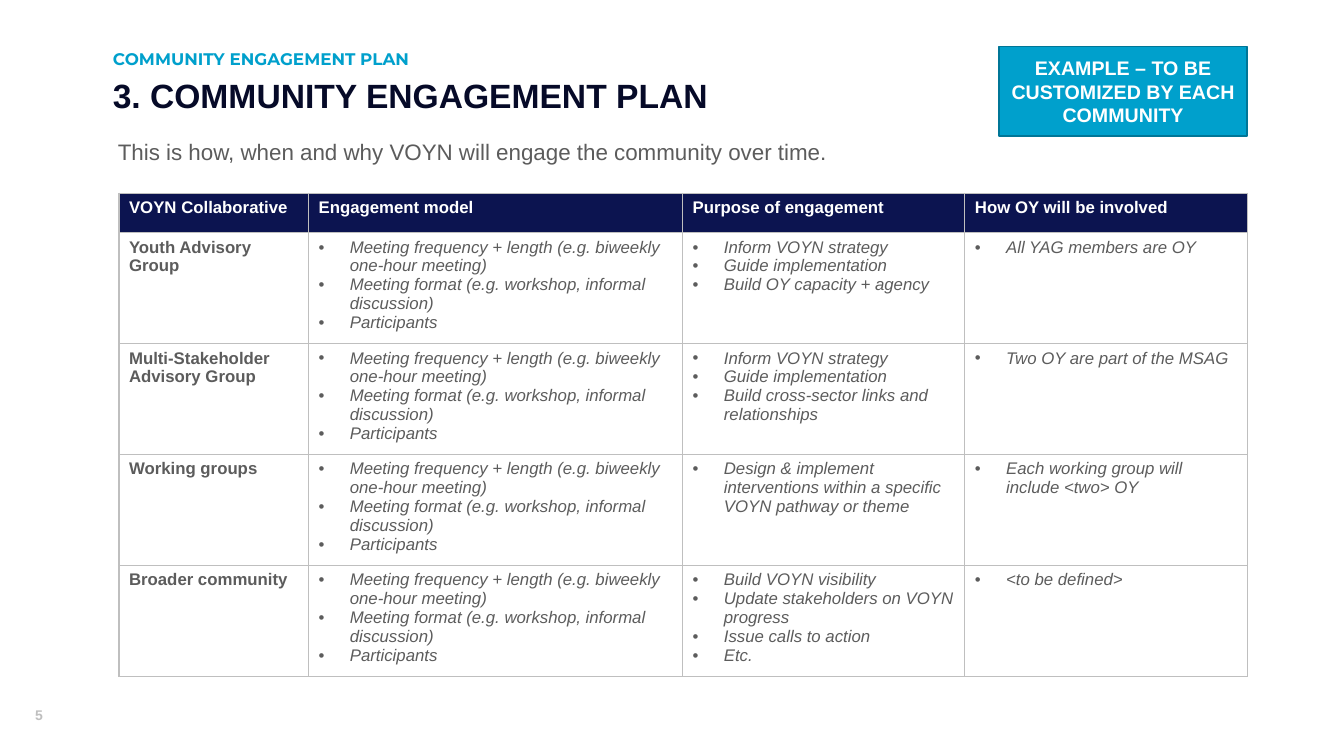
from dataclasses import dataclass

from lxml import etree
from pptx import Presentation
from pptx.dml.color import RGBColor
from pptx.enum.shapes import MSO_SHAPE
from pptx.enum.text import MSO_ANCHOR, PP_ALIGN
from pptx.oxml.ns import qn
from pptx.slide import Slide
from pptx.table import _Cell
from pptx.text.text import TextFrame
from pptx.util import Inches, Pt

RECTANGLE = MSO_SHAPE.RECTANGLE
MIDDLE = MSO_ANCHOR.MIDDLE
CENTER = PP_ALIGN.CENTER

COLORS = {
    "white": "FFFFFF",
    "navy": "0C1450",
    "ink": "060A28",
    "cyan": "00A0CC",
    "teal": "007697",
    "text": "5C5C5C",
    "rule": "BFBFBF",
}


@dataclass(frozen=True)
class Style:
    size: int
    color: str
    bold: bool = False
    italic: bool = False
    font: str = "Arial"


@dataclass(frozen=True)
class Label:
    text: str
    left: float
    top: float
    width: float
    height: float
    style: Style
    line_spacing: float = 0.9


@dataclass(frozen=True)
class Group:
    name: str
    purposes: list[str]
    involvement: str


LABELS = [
    Label("5", 0.25, 6.96, 0.53, 0.27, Style(10, "rule", bold=True), 1.0),
    Label("3. COMMUNITY ENGAGEMENT PLAN", 1.02, 0.74, 6.41, 0.5, Style(24, "ink", bold=True)),
    Label("COMMUNITY ENGAGEMENT PLAN", 1.02, 0.46, 4.05, 0.23,
          Style(12, "cyan", bold=True, font="Montserrat")),
    Label("This is how, when and why VOYN will engage the community over time.",
          1.07, 1.35, 11.3, 0.61, Style(16, "text")),
]

HEADINGS = ["VOYN Collaborative", "Engagement model", "Purpose of engagement",
            "How OY will be involved"]
ENGAGEMENT_MODEL = [
    "Meeting frequency + length (e.g. biweekly one-hour meeting)",
    "Meeting format (e.g. workshop, informal discussion)",
    "Participants",
]
GROUPS = [
    Group("Youth Advisory Group",
          ["Inform VOYN strategy", "Guide implementation", "Build OY capacity + agency"],
          "All YAG members are OY"),
    Group("Multi-Stakeholder Advisory Group",
          ["Inform VOYN strategy", "Guide implementation",
           "Build cross-sector links and relationships"],
          "Two OY are part of the MSAG"),
    Group("Working groups",
          ["Design & implement interventions within a specific VOYN pathway or theme"],
          "Each working group will include <two> OY"),
    Group("Broader community",
          ["Build VOYN visibility", "Update stakeholders on VOYN progress",
           "Issue calls to action", "Etc."],
          "<to be defined>"),
]
COLUMN_WIDTHS = [1.88, 3.71, 2.8, 2.8]
HEADER_HEIGHT = 0.39
GROUP_HEIGHT = 1.03
BULLET_INDENT = 0.31

HEADING_STYLE = Style(12, "white", bold=True)
NAME_STYLE = Style(12, "text", bold=True)
DETAIL_STYLE = Style(12, "text", italic=True)


def rgb(color: str) -> RGBColor:
    return RGBColor.from_string(COLORS[color])


def format_text(frame: TextFrame, style: Style) -> None:
    for paragraph in frame.paragraphs:
        for run in paragraph.runs:
            run.font.name = style.font
            run.font.size = Pt(style.size)
            run.font.bold = style.bold
            run.font.italic = style.italic
            run.font.color.rgb = rgb(style.color)


def add_label(slide: Slide, label: Label) -> None:
    box = slide.shapes.add_textbox(Inches(label.left), Inches(label.top),
                                   Inches(label.width), Inches(label.height))
    frame = box.text_frame
    frame.word_wrap = True
    frame.text = label.text
    frame.paragraphs[0].line_spacing = label.line_spacing
    format_text(frame, label.style)


def add_example_tag(slide: Slide) -> None:
    tag = slide.shapes.add_shape(RECTANGLE, Inches(9.91), Inches(0.46),
                                 Inches(2.46), Inches(0.89))
    tag.shadow.inherit = False
    tag.fill.solid()
    tag.fill.fore_color.rgb = rgb("cyan")
    tag.line.color.rgb = rgb("teal")
    tag.line.width = Pt(1)
    frame = tag.text_frame
    frame.word_wrap = True
    frame.vertical_anchor = MIDDLE
    frame.text = "EXAMPLE – TO BE CUSTOMIZED BY EACH COMMUNITY"
    frame.paragraphs[0].alignment = CENTER
    format_text(frame, Style(14, "white", bold=True))


def add_borders(cell: _Cell) -> None:
    properties = cell._tc.get_or_add_tcPr()
    for position, side in enumerate(("a:lnL", "a:lnR", "a:lnT", "a:lnB")):
        border = etree.Element(qn(side), w=str(Pt(1)))
        fill = etree.SubElement(border, qn("a:solidFill"))
        etree.SubElement(fill, qn("a:srgbClr"), val=COLORS["rule"])
        properties.insert(position, border)


def add_bullets(frame: TextFrame) -> None:
    indent = Inches(BULLET_INDENT)
    for paragraph in frame.paragraphs:
        properties = paragraph._p.get_or_add_pPr()
        properties.set("marL", str(indent))
        properties.set("indent", str(-indent))
        etree.SubElement(properties, qn("a:buFont"), typeface="Arial")
        etree.SubElement(properties, qn("a:buChar"), char="•")


def fill_cell(cell: _Cell, lines: list[str], style: Style, background: str,
              bulleted: bool = False) -> None:
    cell.fill.solid()
    cell.fill.fore_color.rgb = rgb(background)
    add_borders(cell)
    cell.text_frame.text = "\n".join(lines)
    format_text(cell.text_frame, style)
    if bulleted:
        add_bullets(cell.text_frame)


def add_engagement_table(slide: Slide) -> None:
    table = slide.shapes.add_table(
        len(GROUPS) + 1, len(HEADINGS), Inches(1.18), Inches(1.92),
        Inches(sum(COLUMN_WIDTHS)), Inches(HEADER_HEIGHT + GROUP_HEIGHT * len(GROUPS))).table
    for column, width in zip(table.columns, COLUMN_WIDTHS):
        column.width = Inches(width)
    table.rows[0].height = Inches(HEADER_HEIGHT)
    for column, heading in enumerate(HEADINGS):
        fill_cell(table.cell(0, column), [heading], HEADING_STYLE, "navy")
    for row, group in enumerate(GROUPS, start=1):
        table.rows[row].height = Inches(GROUP_HEIGHT)
        fill_cell(table.cell(row, 0), [group.name], NAME_STYLE, "white")
        details = [ENGAGEMENT_MODEL, group.purposes, [group.involvement]]
        for column, lines in enumerate(details, start=1):
            fill_cell(table.cell(row, column), lines, DETAIL_STYLE, "white", bulleted=True)


def main() -> None:
    presentation = Presentation()
    presentation.slide_width = Inches(13.33)
    presentation.slide_height = Inches(7.5)
    slide = presentation.slides.add_slide(presentation.slide_layouts[6])
    for label in LABELS:
        add_label(slide, label)
    add_engagement_table(slide)
    add_example_tag(slide)
    presentation.save("out.pptx")


if __name__ == "__main__":
    main()
